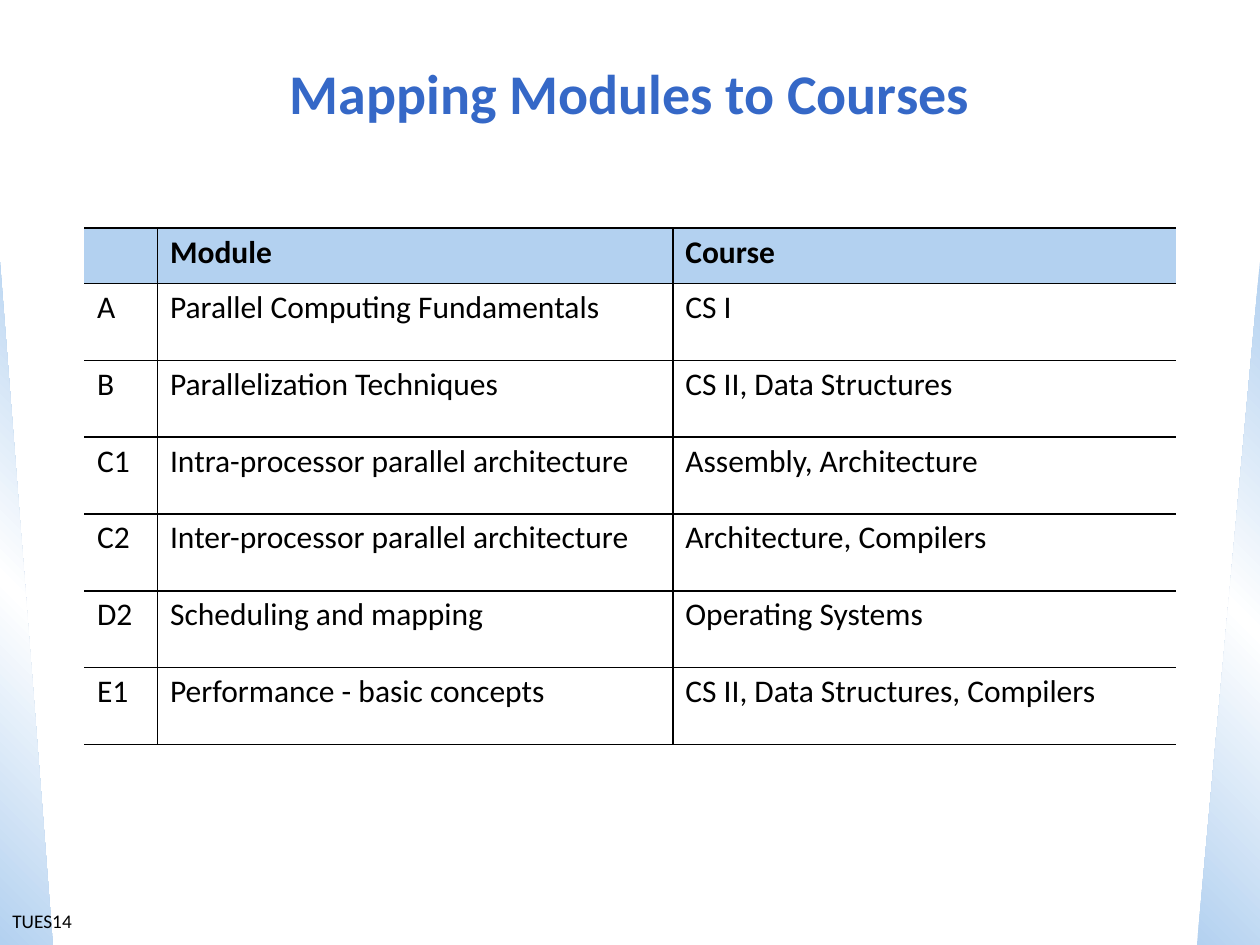
from dataclasses import dataclass

from lxml import etree
from pptx import Presentation
from pptx.dml.color import RGBColor
from pptx.enum.shapes import MSO_SHAPE as Shape
from pptx.enum.text import MSO_ANCHOR as Anchor, PP_ALIGN as Align
from pptx.oxml import parse_xml
from pptx.oxml.ns import nsdecls, qn
from pptx.util import Inches, Pt


@dataclass(frozen=True)
class Theme:
    font: str = "Calibri"
    ink: str = "000000"
    blue: str = "3568C7"
    pale: str = "B3D1F0"
    white: str = "FFFFFF"
    title: int = 32
    body: int = 18
    foot: int = 11


theme = Theme()


def write(frame, text, size, color=theme.ink, bold=False):
    run = frame.paragraphs[0].add_run()
    run.text = text
    run.font.name = theme.font
    run.font.size = Pt(size)
    run.font.bold = bold
    run.font.color.rgb = RGBColor.from_string(color)


def edge(cell, side, shown):
    line = etree.SubElement(cell._tc.get_or_add_tcPr(), qn(f"a:ln{side}"), w=str(Pt(1)))
    if shown:
        fill = etree.SubElement(line, qn("a:solidFill"))
        etree.SubElement(fill, qn("a:srgbClr"), val=theme.ink)
    else:
        etree.SubElement(line, qn("a:noFill"))


deck = Presentation()
deck.slide_width, deck.slide_height = Inches(10), Inches(7.5)
slide = deck.slides.add_slide(deck.slide_layouts[6])
shapes = slide.shapes
slide.background.fill.solid()
slide.background.fill.fore_color.rgb = RGBColor.from_string(theme.white)

# Side wedges, the right one mirrored
stops = "".join(
    f'<a:gs pos="{pos}"><a:srgbClr val="{color}"/></a:gs>'
    for pos, color in ((0, theme.pale), (50000, theme.white), (100000, theme.pale))
)
for left, width, angle, flip in ((0, 0.42, 315, False), (9.5, 0.5, 45, True)):
    wedge = shapes.add_shape(
        Shape.RIGHT_TRIANGLE, Inches(left), Inches(2.08), Inches(width), Inches(5.42)
    )
    wedge.shadow.inherit = False
    wedge.line.fill.background()
    props = wedge._element.spPr
    props.find(qn("a:prstGeom")).addnext(parse_xml(
        f'<a:gradFill {nsdecls("a")} rotWithShape="1"><a:gsLst>{stops}</a:gsLst>'
        f'<a:lin ang="{angle * 60000}" scaled="1"/></a:gradFill>'
    ))
    if flip:
        props.find(qn("a:xfrm")).set("flipH", "1")

# Title
title = shapes.add_textbox(Inches(0.5), Inches(0.3), Inches(9), Inches(0.87)).text_frame
title.word_wrap = True
title.vertical_anchor = Anchor.MIDDLE
title.paragraphs[0].alignment = Align.CENTER
write(title, "Mapping Modules to Courses", theme.title, theme.blue, True)

# Table of modules and courses
rows = (
    ("", "Module", "Course"),
    ("A", "Parallel Computing Fundamentals", "CS I"),
    ("B", "Parallelization Techniques", "CS II, Data Structures"),
    ("C1", "Intra-processor parallel architecture", "Assembly, Architecture"),
    ("C2", "Inter-processor parallel architecture", "Architecture, Compilers"),
    ("D2", "Scheduling and mapping", "Operating Systems"),
    ("E1", "Performance - basic concepts", "CS II, Data Structures, Compilers"),
)
widths = (0.58, 4.09, 3.99)
table = shapes.add_table(
    len(rows), len(widths), Inches(0.67), Inches(1.81), Inches(8.67), Inches(4.09)
).table
for col, width in zip(table.columns, widths):
    col.width = Inches(width)

for r, row in enumerate(rows):
    head = r == 0
    table.rows[r].height = Inches(0.44 if head else 0.61)
    for c, text in enumerate(row):
        cell = table.cell(r, c)
        cell.margin_left = cell.margin_right = Inches(0.1)
        cell.margin_top = cell.margin_bottom = Inches(0.04)
        # The table is open at its left and right ends
        edge(cell, "L", c > 0)
        edge(cell, "R", c < len(row) - 1)
        edge(cell, "T", True)
        edge(cell, "B", True)
        if head:
            cell.fill.solid()
            cell.fill.fore_color.rgb = RGBColor.from_string(theme.pale)
        else:
            cell.fill.background()
        if text:
            write(cell.text_frame, text, theme.body, bold=head)

# Footer
foot = shapes.add_textbox(0, Inches(7.17), Inches(1.33), Inches(0.33)).text_frame
foot.word_wrap = True
write(foot, "TUES14", theme.foot)

deck.save("out.pptx")
